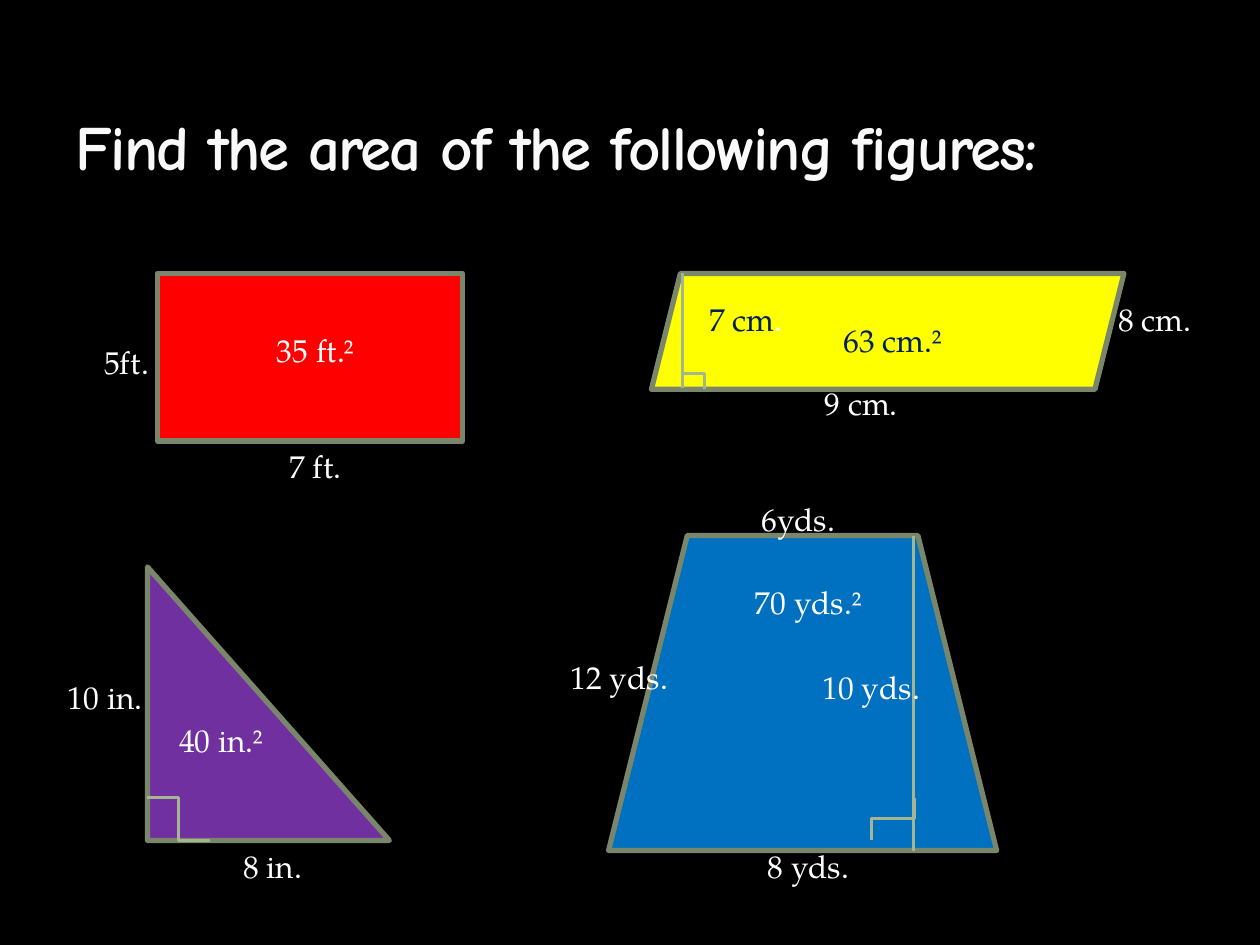
"""Build a slide of four figures whose areas are to be found."""
from typing import NamedTuple

from lxml import etree
from pptx import Presentation
from pptx.dml.color import RGBColor
from pptx.enum.shapes import MSO_CONNECTOR, MSO_SHAPE
from pptx.enum.text import MSO_ANCHOR, MSO_AUTO_SIZE, PP_ALIGN
from pptx.oxml import parse_xml
from pptx.oxml.ns import nsdecls, qn
from pptx.util import Inches, Pt

RECTANGLE = MSO_SHAPE.RECTANGLE
PARALLELOGRAM = MSO_SHAPE.PARALLELOGRAM
RIGHT_TRIANGLE = MSO_SHAPE.RIGHT_TRIANGLE
TRAPEZOID = MSO_SHAPE.TRAPEZOID
STRAIGHT = MSO_CONNECTOR.STRAIGHT
ELBOW = MSO_CONNECTOR.ELBOW

TITLE_FONT, LABEL_FONT = "Comic Neue", "TeX Gyre Pagella"
BLACK, WHITE, NAVY = "000000", "FFFFFF", "002060"
TITLE_COLOR, TITLE_OUTLINE = "F9F9F9", "3C4422"
EDGE_COLOR, MARK_COLOR = "7A866C", "A5B592"
LABEL_HEIGHT = 0.42


class Label(NamedTuple):
    left: float
    top: float
    spans: tuple[tuple[str, str], ...]
    width: float = 1.67


class Mark(NamedTuple):
    kind: MSO_CONNECTOR
    begin: tuple[float, float]
    end: tuple[float, float]
    rotation: int = 0


class Figure(NamedTuple):
    kind: MSO_SHAPE
    bounds: tuple[float, float, float, float]
    fill: str
    marks: tuple[Mark, ...]
    labels: tuple[Label, ...]


def white(text: str) -> tuple[tuple[str, str], ...]:
    return ((text, WHITE),)


FIGURES = (
    Figure(RECTANGLE, (1.25, 2.17, 2.42, 1.33), "FF0000", (), (
        Label(1.92, 3.5, white("7 ft."), 1.17),
        Label(0.17, 2.67, white("5ft.")),
        Label(1.67, 2.58, white("35 ft.²")),
    )),
    Figure(PARALLELOGRAM, (5.17, 2.17, 3.75, 0.92), "FFFF00", (
        Mark(STRAIGHT, (5.42, 2.17), (5.42, 3.08)),
        Mark(ELBOW, (5.63, 2.88), (5.38, 3.05), 270),
    ), (
        Label(6, 3, white("9 cm.")),
        Label(8.33, 2.33, white("8 cm.")),
        Label(5.42, 2.33, (("7 cm", NAVY), (".", WHITE)), 1),
        Label(6.25, 2.5, (("63 cm.²", NAVY),)),
    )),
    Figure(RIGHT_TRIANGLE, (1.17, 4.5, 1.92, 2.17), "7030A0", (
        Mark(ELBOW, (1.17, 6.33), (1.67, 6.67)),
    ), (
        Label(1.33, 6.67, white("8 in.")),
        Label(0.25, 5.33, white("10 in."), 1.17),
        Label(0.92, 5.67, white("40 in.²")),
    )),
    Figure(TRAPEZOID, (4.83, 4.25, 3.08, 2.5), "0070C0", (
        Mark(STRAIGHT, (7.25, 4.25), (7.25, 6.75)),
        Mark(ELBOW, (6.92, 6.33), (7.25, 6.67), 90),
    ), (
        Label(5.58, 6.67, white("8 yds.")),
        Label(4.08, 5.17, white("12 yds.")),
        Label(5.5, 3.92, white("6yds.")),
        Label(6.08, 5.25, white("10 yds.")),
        Label(5.58, 4.58, white("70 yds.²")),
    )),
)


def rgb(color: str) -> RGBColor:
    return RGBColor.from_string(color)


def add_span(para, text: str, font: str, size: float, color: str):
    span = para.add_run()
    span.text = text
    span.font.name = font
    span.font.size = Pt(size)
    span.font.color.rgb = rgb(color)
    return span


def write_title(page, text: str) -> None:
    title = page.shapes.title
    title.left, title.top = Inches(0.5), Inches(0.17)
    title.width, title.height = Inches(9), Inches(1.33)
    frame = title.text_frame
    frame.auto_size = MSO_AUTO_SIZE.NONE
    frame.vertical_anchor = MSO_ANCHOR.BOTTOM
    para = frame.paragraphs[0]
    para.alignment = PP_ALIGN.LEFT
    span = add_span(para, text, TITLE_FONT, 36, TITLE_COLOR)
    span.font.bold = True
    properties = span.font._element
    properties.set("spc", "-100")
    properties.insert(0, parse_xml(
        f'<a:ln {nsdecls("a")} w="{Pt(0.25)}"><a:solidFill>'
        f'<a:srgbClr val="{TITLE_OUTLINE}"><a:alpha val="25000"/></a:srgbClr>'
        '</a:solidFill></a:ln>'))


def add_mark(page, mark: Mark) -> None:
    points = (Inches(value) for value in mark.begin + mark.end)
    connector = page.shapes.add_connector(mark.kind, *points)
    connector.line.color.rgb = rgb(MARK_COLOR)
    connector.line.width = Pt(1.75)
    properties = connector._element.spPr
    etree.SubElement(properties, qn("a:effectLst"))
    if mark.rotation:
        properties.find(qn("a:xfrm")).set("rot", str(mark.rotation * 60000))


def add_label(page, label: Label) -> None:
    bounds = (label.left, label.top, label.width, LABEL_HEIGHT)
    box = page.shapes.add_textbox(*map(Inches, bounds))
    frame = box.text_frame
    frame.word_wrap = True
    frame.auto_size = MSO_AUTO_SIZE.SHAPE_TO_FIT_TEXT
    para = frame.paragraphs[0]
    para.alignment = PP_ALIGN.CENTER
    for text, color in label.spans:
        add_span(para, text, LABEL_FONT, 18, color)


def add_figure(page, figure: Figure) -> None:
    shape = page.shapes.add_shape(figure.kind, *map(Inches, figure.bounds))
    shape.shadow.inherit = False
    shape.fill.solid()
    shape.fill.fore_color.rgb = rgb(figure.fill)
    shape.line.color.rgb = rgb(EDGE_COLOR)
    shape.line.width = Pt(3)
    etree.SubElement(shape.line._ln, qn("a:round"))
    for mark in figure.marks:
        add_mark(page, mark)
    for label in figure.labels:
        add_label(page, label)


def main() -> None:
    deck = Presentation()
    deck.slide_width, deck.slide_height = Inches(10), Inches(7.5)
    page = deck.slides.add_slide(deck.slide_layouts[5])
    page.background.fill.solid()
    page.background.fill.fore_color.rgb = rgb(BLACK)
    write_title(page, "Find the area of the following figures:")
    for figure in FIGURES:
        add_figure(page, figure)
    deck.save("out.pptx")


if __name__ == "__main__":
    main()
